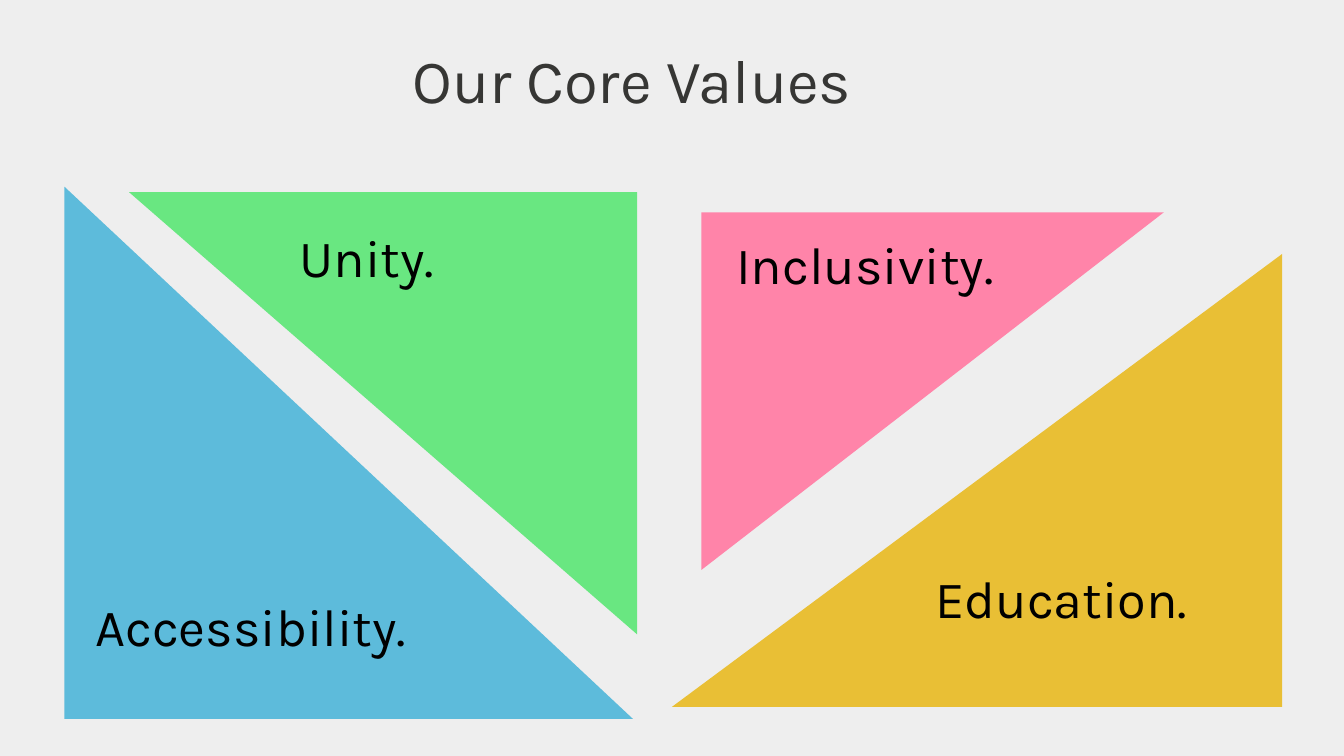
from pptx import Presentation
from pptx.dml.color import RGBColor
from pptx.enum.shapes import MSO_SHAPE
from pptx.enum.text import MSO_ANCHOR, MSO_AUTO_SIZE, PP_ALIGN
from pptx.util import Inches, Pt

WIDTH = Inches(10)
HEIGHT = WIDTH * 9 // 16
FONT = "Karla"
PAPER = RGBColor(0xEE, 0xEE, 0xEE)
CHARCOAL = RGBColor(0x36, 0x36, 0x34)
BLACK = RGBColor(0, 0, 0)
BLUE = RGBColor(0x5D, 0xBB, 0xDB)
GOLD = RGBColor(0xE9, 0xBF, 0x35)
PINK = RGBColor(0xFF, 0x84, 0xA9)
GREEN = RGBColor(0x69, 0xE7, 0x81)

TRIANGLES = [
    ((4.8, 24.71, 42.3, 70.4), BLUE, 0, False),
    ((50, 33.6, 45.4, 59.91), GOLD, 0, True),
    ((52.2, 28.09, 34.4, 47.29), PINK, 180, True),
    ((9.6, 25.42, 37.8, 58.49), GREEN, 180, False),
]
LABEL_HEIGHT = 38.4
LABELS = [
    ("Accessibility.", 6.1, 76.8, 27.8),
    ("Unity.", 21.3, 28.09, 25.2),
    ("Inclusivity.", 53.8, 28.98, 25.2),
    ("Education.", 68.6, 73.07, 25.2),
]


def place(left, top, width, height):
    return (int(WIDTH * left / 100), int(HEIGHT * top / 100),
            int(WIDTH * width / 100), int(HEIGHT * height / 100))


def write(sp, text, size, color):
    tf = sp.text_frame
    tf.text = text
    tf.word_wrap = True
    tf.auto_size = MSO_AUTO_SIZE.NONE
    tf.vertical_anchor = MSO_ANCHOR.TOP
    tf.margin_left = tf.margin_right = Inches(0.1)
    tf.margin_top = tf.margin_bottom = Inches(0.1)
    p = tf.paragraphs[0]
    p.alignment = PP_ALIGN.LEFT
    font = p.runs[0].font
    font.name, font.size = FONT, Pt(size)
    font.color.rgb = color


def add_title(s, text):
    sp = s.shapes.title
    sp.left, sp.top, sp.width, sp.height = place(29.7, 3.73, 49.3, 49.24)
    write(sp, text, 33, CHARCOAL)


def add_triangle(s, box, color, rotation, flipped):
    sp = s.shapes.add_shape(MSO_SHAPE.RIGHT_TRIANGLE, *place(*box))
    sp.shadow.inherit = False
    sp.fill.solid()
    sp.fill.fore_color.rgb = color
    sp.line.fill.background()
    sp.rotation = rotation
    if flipped:
        sp.element.spPr.xfrm.set("flipH", "1")


def add_label(s, text, left, top, width):
    sp = s.shapes.add_textbox(*place(left, top, width, LABEL_HEIGHT))
    write(sp, text, 28, BLACK)


def main():
    prs = Presentation()
    prs.slide_width, prs.slide_height = WIDTH, HEIGHT
    s = prs.slides.add_slide(prs.slide_layouts[5])
    s.background.fill.solid()
    s.background.fill.fore_color.rgb = PAPER
    add_title(s, "Our Core Values")
    for triangle in TRIANGLES:
        add_triangle(s, *triangle)
    for label in LABELS:
        add_label(s, *label)
    prs.save("out.pptx")


if __name__ == "__main__":
    main()
